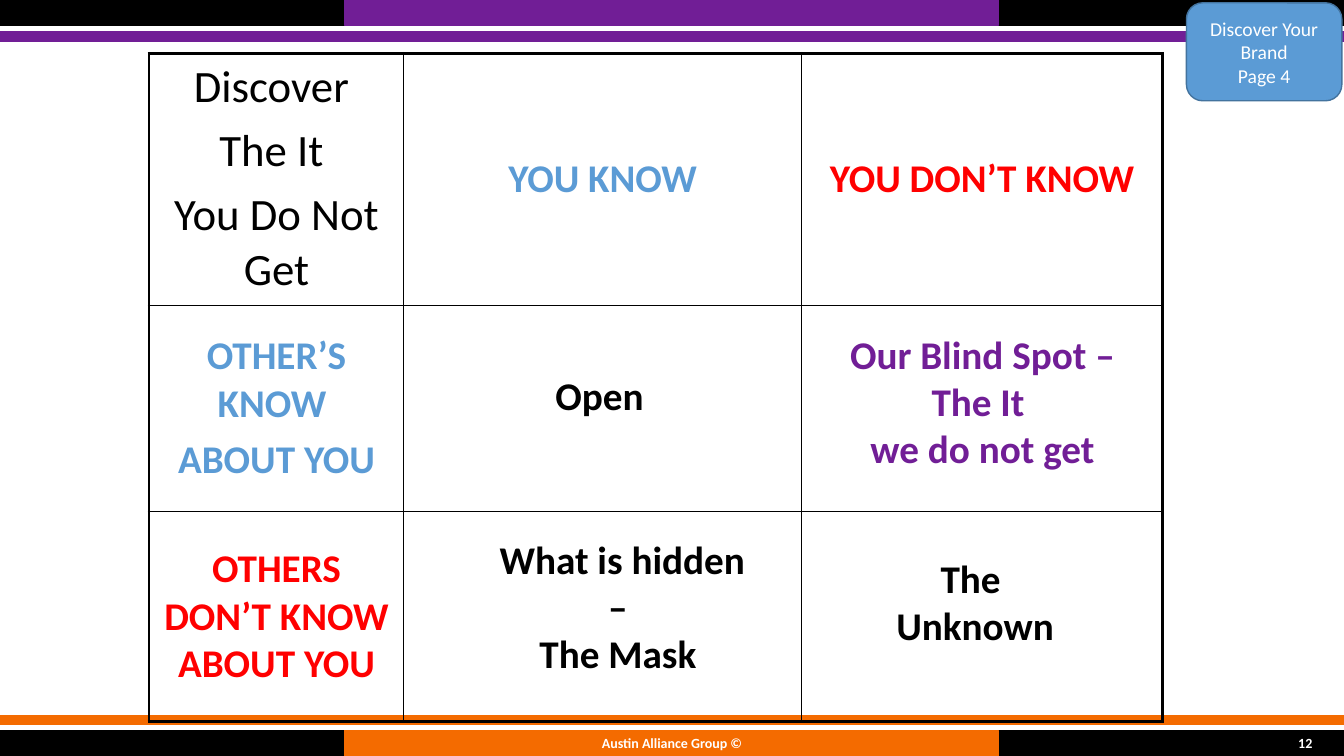
from lxml.etree import SubElement
from pptx import Presentation
from pptx.dml.color import RGBColor
from pptx.enum.shapes import MSO_SHAPE
from pptx.enum.text import MSO_ANCHOR, MSO_AUTO_SIZE, PP_ALIGN
from pptx.oxml.ns import qn
from pptx.util import Pt

WIDE, HIGH = 960, 540
BLACK, WHITE, RED = "000000", "FFFFFF", "FF0000"
BLUE, PURPLE, ORANGE = "5B9BD5", "711E96", "F46B00"

COLS = [182, 284, 258]
ROWS = [180, 147.5, 150]
# Each cell: lines, size, colour, bold
GRID = [
    [(["Discover ", "The It ", "You Do Not Get"], 32, BLACK, False),
     (["YOU KNOW"], 28, BLUE, True),
     (["YOU DON’T KNOW"], 28, RED, True)],
    [(["OTHER’S KNOW ", "ABOUT YOU"], 28, BLUE, True), None, None],
    [(["OTHERS DON’T KNOW ABOUT YOU"], 28, RED, True), None, None],
]
# Each answer: box, lines, colour
NOTES = [
    ((341.5, 261.5, 173.5, 41), ["Open"], BLACK),
    ((341.5, 378.5, 206, 109), ["What is hidden – ", "The Mask "], BLACK),
    ((587, 392.5, 219, 75), ["The ", "Unknown"], BLACK),
    ((587, 232.5, 229.5, 109), ["Our Blind Spot – The It ", "we do not get"], PURPLE),
]


def rgb(code):
    return RGBColor.from_string(code)


def write(frame, lines, size=28, color=BLACK, bold=False,
          align=PP_ALIGN.CENTER, gap=0):
    """Fill a text frame; gap is the space before later lines, as a share of size."""
    frame.word_wrap = True
    for i, line in enumerate(lines):
        para = frame.paragraphs[0] if i == 0 else frame.add_paragraph()
        para.alignment = align
        if i and gap:
            para.space_before = Pt(size * gap)
        run = para.add_run()
        run.text = line
        run.font.name = "Calibri"
        run.font.size = Pt(size)
        run.font.bold = bold
        run.font.color.rgb = rgb(color)


def block(slide, box, fill, line=None, kind=MSO_SHAPE.RECTANGLE):
    shape = slide.shapes.add_shape(kind, *map(Pt, box))
    shape.shadow.inherit = False
    shape.fill.solid()
    shape.fill.fore_color.rgb = rgb(fill)
    shape.line.color.rgb = rgb(line or fill)
    shape.line.width = Pt(1)
    return shape


def label(slide, box, lines, **form):
    frame = slide.shapes.add_textbox(*map(Pt, box)).text_frame
    write(frame, lines, **form)
    return frame


def band(slide, top, stripe, color):
    """Draw a black bar with a coloured middle, and its thin stripe."""
    block(slide, (0, top, WIDE, 18), BLACK)
    block(slide, (246, top, 467.5, 18), color)
    block(slide, (0, stripe, WIDE, 6.5), color)


def footer(slide, top):
    for left, width, text, align in (
            (318, 324, "Austin Alliance Group ©", PP_ALIGN.CENTER),
            (728.5, 216, "12", PP_ALIGN.RIGHT)):
        frame = label(slide, (left, top, width, 13.5), [text], size=10,
                      color=WHITE, bold=True, align=align)
        frame.margin_top = frame.margin_bottom = 0
        frame.vertical_anchor = MSO_ANCHOR.MIDDLE


def edge(cell, side, width):
    line = SubElement(cell._tc.get_or_add_tcPr(), qn("a:ln" + side), w=str(Pt(width)))
    fill = SubElement(line, qn("a:solidFill"))
    SubElement(fill, qn("a:srgbClr"), val=BLACK)


def window(slide, left, top):
    """Draw the three by three table with a heavy outer frame."""
    table = slide.shapes.add_table(
        len(ROWS), len(COLS), Pt(left), Pt(top), Pt(sum(COLS)), Pt(sum(ROWS))).table
    table.first_row = table.horz_banding = False
    for col, width in zip(table.columns, COLS):
        col.width = Pt(width)
    for row, height in zip(table.rows, ROWS):
        row.height = Pt(height)
    for r, cells in enumerate(GRID):
        for c, item in enumerate(cells):
            cell = table.cell(r, c)
            cell.margin_left = cell.margin_right = Pt(5.75)
            cell.margin_top = cell.margin_bottom = Pt(5)
            outer = {"L": c == 0, "R": c == len(COLS) - 1,
                     "T": r == 0, "B": r == len(ROWS) - 1}
            for side, heavy in outer.items():
                edge(cell, side, 2.25 if heavy else 1)
            cell.fill.background()
            if item:
                lines, size, color, bold = item
                write(cell.text_frame, lines, size=size, color=color,
                      bold=bold, gap=0.2)
                cell.vertical_anchor = (
                    MSO_ANCHOR.MIDDLE if r or c else MSO_ANCHOR.TOP)


def notes(slide):
    for box, lines, color in NOTES:
        frame = label(slide, box, lines, color=color, bold=True)
        frame.auto_size = MSO_AUTO_SIZE.SHAPE_TO_FIT_TEXT


def badge(slide, box):
    shape = block(slide, box, BLUE, "43739E", MSO_SHAPE.ROUNDED_RECTANGLE)
    write(shape.text_frame, ["Discover Your Brand", "Page 4"], size=14, color=WHITE)
    shape.text_frame.vertical_anchor = MSO_ANCHOR.MIDDLE


def main():
    deck = Presentation()
    deck.slide_width, deck.slide_height = Pt(WIDE), Pt(HIGH)
    slide = deck.slides.add_slide(deck.slide_layouts[6])
    band(slide, HIGH - 18, 511, ORANGE)
    band(slide, 0, 23, PURPLE)
    footer(slide, 524)
    window(slide, 106.5, 38)
    notes(slide)
    badge(slide, (847.5, 2, 111, 70))
    deck.save("out.pptx")


if __name__ == "__main__":
    main()
